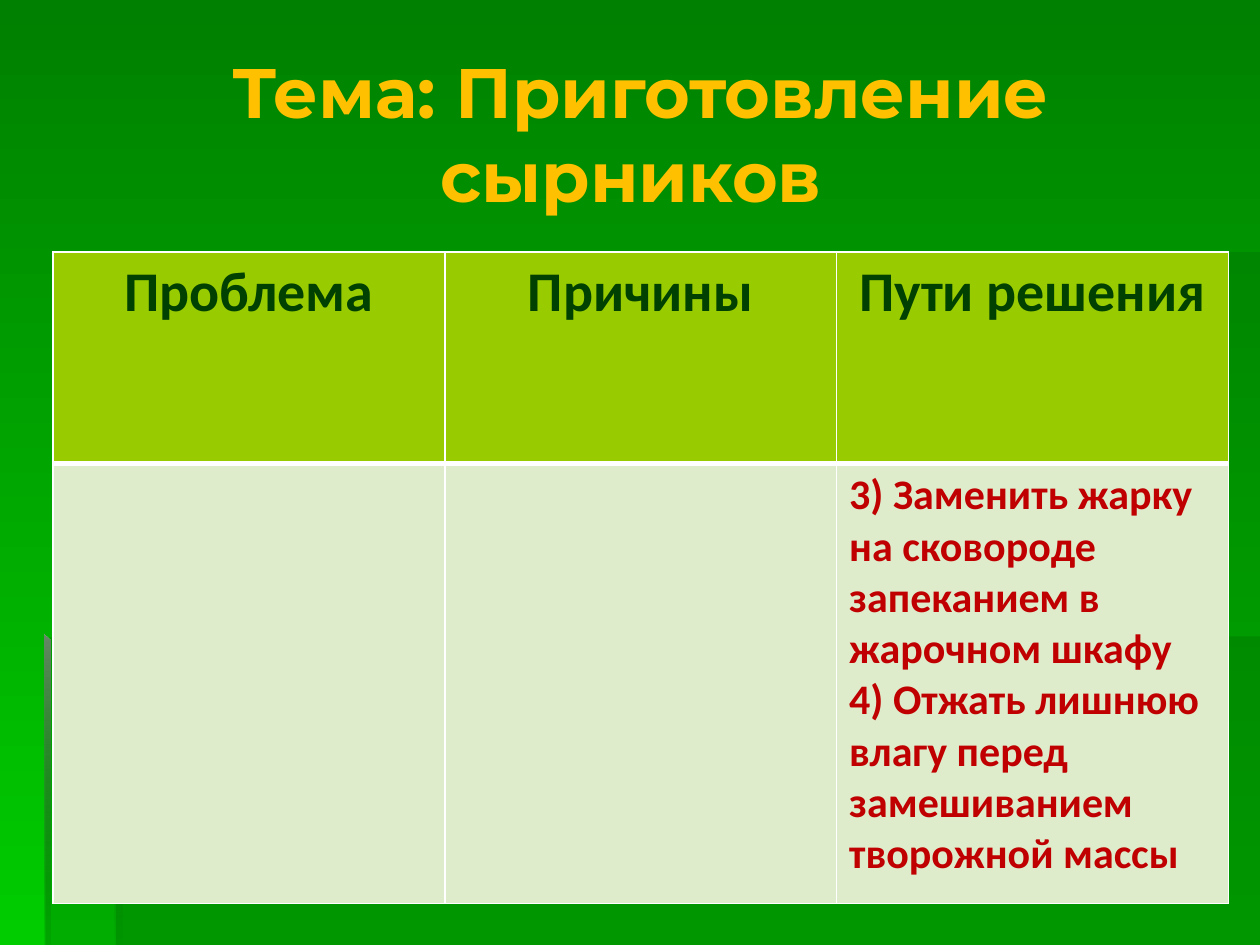
import pptx
import pptx.dml.color
import pptx.enum.text
import pptx.oxml
import pptx.oxml.ns
import pptx.util

Inches, Pt = pptx.util.Inches, pptx.util.Pt
RGB = pptx.dml.color.RGBColor.from_string
ALIGN = pptx.enum.text.PP_ALIGN
qn, nsdecls = pptx.oxml.ns.qn, pptx.oxml.ns.nsdecls

THEME = {
    "bg": ("008000", "00CC00"),
    "panel": "006600", "edge": "005E00", "glow": "668666",
    "head_fill": "99CC00", "body_fill": "DEECCC", "border": "FFFFFF",
    "outline": "161616",
    "title": {"name": "Montserrat", "size": Pt(40), "bold": True, "color": "FFC000"},
    "head": {"name": "Calibri", "size": Pt(32), "bold": True, "color": "004000"},
    "body": {"name": "Calibri", "size": Pt(24), "bold": True, "color": "C00000"},
}


def write(p, text, style, align):
    p.alignment = align
    r = p.add_run()
    r.text = text
    for key, value in style.items():
        if key == "color":
            r.font.color.rgb = RGB(value)
        else:
            setattr(r.font, key, value)
    return r


def line_xml(tag, color, width):
    return pptx.oxml.parse_xml(
        f'<a:{tag} {nsdecls("a")} w="{Pt(width)}"><a:solidFill>'
        f'<a:srgbClr val="{color}"/></a:solidFill></a:{tag}>')


prs = pptx.Presentation()
prs.slide_width, prs.slide_height = Inches(10), Inches(7.5)
s = prs.slides.add_slide(prs.slide_layouts[5])

# Background gradient, top to bottom
fill = s.background.fill
fill.gradient()
fill.gradient_angle = 270
for stop, color in zip(fill.gradient_stops, THEME["bg"]):
    stop.color.rgb = RGB(color)

# Translucent panels and their edges: points, (colour, opacity) stops, angle
panel, edge, glow = THEME["panel"], THEME["edge"], THEME["glow"]
across = [(panel, 0), (edge, 100)]
DECOR = [
    ([(0.92, 5.05), (0.92, 7.5), (10, 7.5), (10, 5.05)], [(panel, 30)], 0),
    ([(0.94, 5.06), (0.36, 5.06), (0.36, 7.5), (10, 7.5), (10, 2), (0.94, 2)],
     [(panel, 30)], 0),
    ([(0.92, 2), (0.92, 2.05), (8.91, 2.05), (8.91, 2)], across, 0),
    ([(0.92, 2), (0.92, 5.1), (0.97, 5.1), (0.96, 2.04)],
     [(glow, 100), (panel, 100)], 270),
    ([(0.91, 7.5), (0.97, 7.5), (0.96, 5.08), (0.91, 5.04)],
     [(glow, 100), (panel, 0)], 270),
    ([(0.35, 5.04), (0.35, 5.09), (5.35, 5.09), (5.35, 5.04)], across, 0),
    ([(0.35, 5.04), (0.35, 7.5), (0.4, 7.5), (0.4, 5.09)],
     [(glow, 100), (panel, 10)], 270),
]
for points, stops, angle in DECOR:
    pts = [(Inches(x), Inches(y)) for x, y in points]
    builder = s.shapes.build_freeform(*pts[0])
    builder.add_line_segments(pts[1:], close=True)
    sp = builder.convert_to_shape()
    sp.shadow.inherit = False
    sp.line.fill.background()
    if len(stops) == 1:
        sp.fill.solid()
        sp.fill.fore_color.rgb = RGB(stops[0][0])
    else:
        sp.fill.gradient()
        sp.fill.gradient_angle = angle
        for stop, (color, _) in zip(sp.fill.gradient_stops, stops):
            stop.color.rgb = RGB(color)
    for clr, (_, opacity) in zip(sp.element.iter(qn("a:srgbClr")), stops):
        if opacity < 100:
            clr.append(pptx.oxml.parse_xml(
                f'<a:alpha {nsdecls("a")} val="{opacity * 1000}"/>'))

# Title, brought in front of the panels
title = s.shapes.title
title.element.getparent().append(title.element)
title.left, title.top = Inches(0.5), Inches(0.27)
title.width, title.height = Inches(9.17), Inches(1.57)
tf = title.text_frame
tf.word_wrap = True
tf.auto_size = pptx.enum.text.MSO_AUTO_SIZE.NONE
tf.vertical_anchor = pptx.enum.text.MSO_ANCHOR.MIDDLE
r = write(tf.paragraphs[0], "Тема: Приготовление сырников ", THEME["title"], ALIGN.CENTER)
r.font.fill.solid()
r.font.color.rgb = RGB(THEME["title"]["color"])
r.font._element.insert(0, line_xml("ln", THEME["outline"], 0.75))

# Table
ROWS = [
    [["Проблема"], ["Причины"], ["Пути решения"]],
    [[], [], ["3) Заменить жарку на сковороде запеканием в жарочном шкафу",
              "4) Отжать лишнюю влагу перед замешиванием творожной массы"]],
]
LOOKS = [
    ("head", ALIGN.CENTER, {"lnL": 1, "lnR": 1, "lnT": 1, "lnB": 3}),
    ("body", ALIGN.LEFT, {"lnL": 1, "lnR": 1, "lnT": 3, "lnB": 1}),
]
table = s.shapes.add_table(2, 3, Inches(0.42), Inches(2), Inches(9.33), Inches(5.17)).table
for row, height in zip(table.rows, (1.68, 3.49)):
    row.height = Inches(height)
for col in table.columns:
    col.width = Inches(3.11)

for i, (texts, (look, align, borders)) in enumerate(zip(ROWS, LOOKS)):
    for j, lines in enumerate(texts):
        cell = table.cell(i, j)
        cell.fill.solid()
        cell.fill.fore_color.rgb = RGB(THEME[look + "_fill"])
        tf = cell.text_frame
        for n, text in enumerate(lines):
            p = tf.add_paragraph() if n else tf.paragraphs[0]
            write(p, text, THEME[look], align)
        tcPr = cell._tc.get_or_add_tcPr()
        for n, (tag, width) in enumerate(borders.items()):
            tcPr.insert(n, line_xml(tag, THEME["border"], width))

prs.save("out.pptx")
